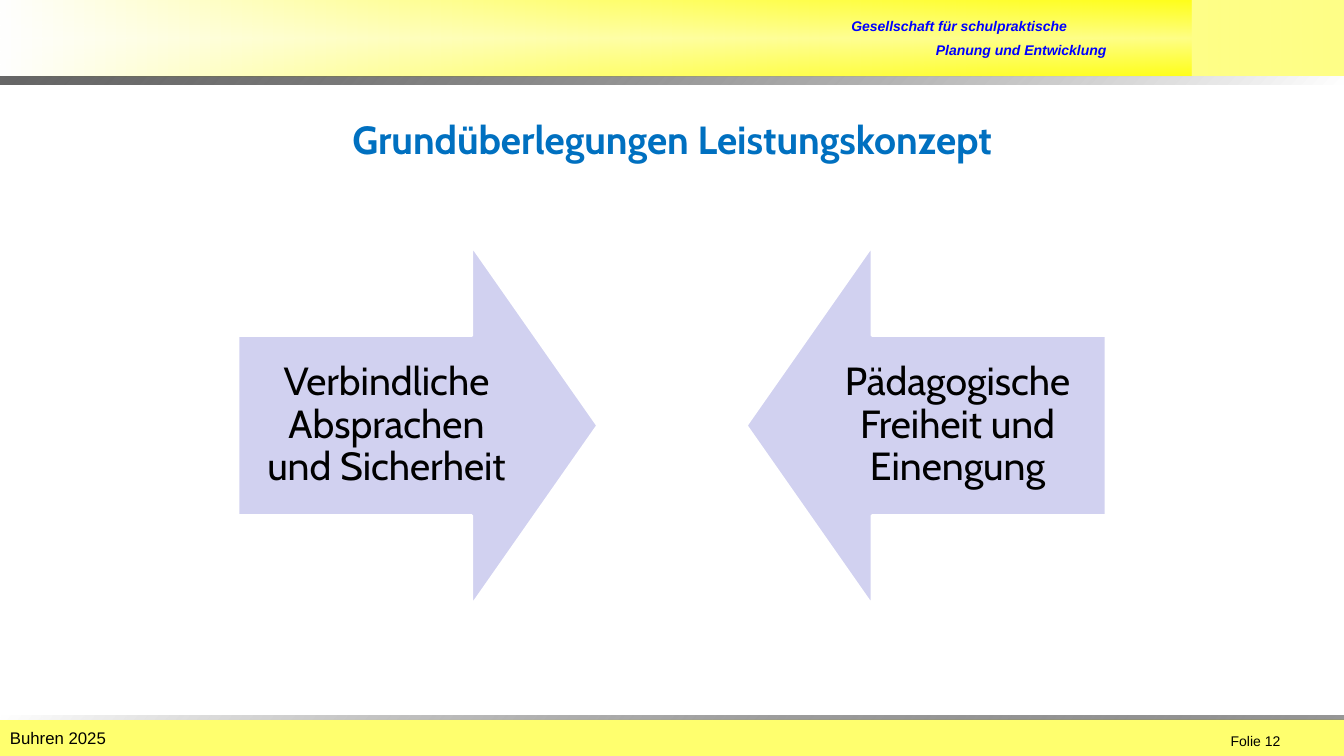
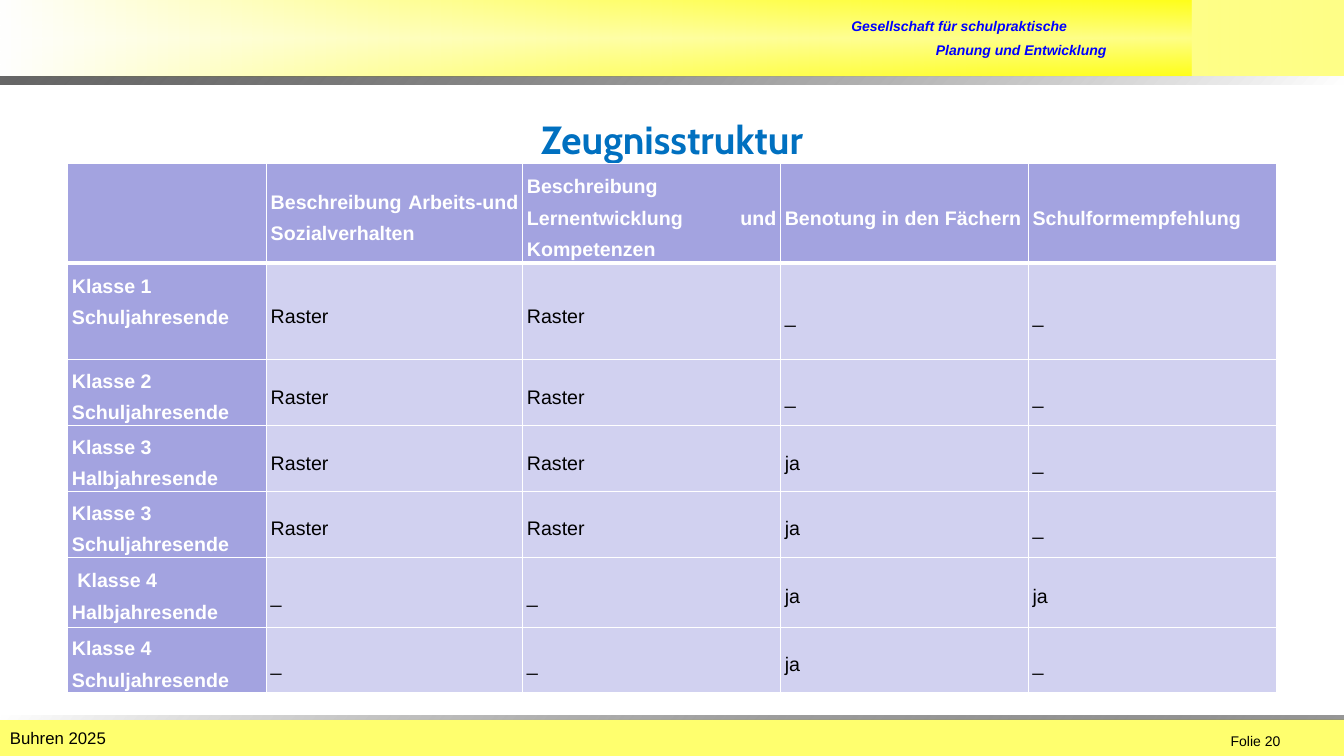
"""Build two slides on grading concepts and school report structure."""
from dataclasses import dataclass

import lxml.etree
import pptx
import pptx.dml.color
import pptx.enum.shapes
import pptx.enum.text
import pptx.oxml.ns
import pptx.util

Pt = pptx.util.Pt
Align = pptx.enum.text.PP_ALIGN
Anchor = pptx.enum.text.MSO_ANCHOR
Preset = pptx.enum.shapes.MSO_SHAPE
qn = pptx.oxml.ns.qn

COLOURS = {
    "yellow": "FFFF00",
    "white": "FFFFFF",
    "black": "000000",
    "blue": "0000FF",
    "title": "0070C0",
    "lilac": "A3A3E0",
    "pale": "D1D1F0",
}
WIDTH, HEIGHT = 960, 540


@dataclass(frozen=True)
class Stop:
    """A gradient stop with place and opacity in percent."""
    place: int
    colour: str
    opacity: int = 100


@dataclass(frozen=True)
class Band:
    """A borderless strip that starts at the left edge."""
    top: float
    width: float
    height: float
    stops: tuple[Stop, ...]
    angle: int = 0


@dataclass(frozen=True)
class Label:
    """A short line of text in the header or footer."""
    text: str
    left: float
    top: float
    width: float
    size: int = 10
    colour: str = "black"
    emphasis: bool = False


@dataclass(frozen=True)
class Arrow:
    """A block arrow with its text."""
    text: str
    left: float
    preset: Preset


@dataclass(frozen=True)
class Row:
    """A table row with its height and cell texts."""
    height: float
    texts: tuple[str, ...]
    label_bottom: float = 0


BANDS = (
    Band(0, 851, 54.7, (Stop(0, "yellow", 91), Stop(50, "white"), Stop(100, "yellow", 91)), 90),
    Band(0, WIDTH, 54.7, (Stop(0, "white"), Stop(100, "yellow", 47))),
    Band(514, WIDTH, HEIGHT - 514, (Stop(0, "yellow", 57),)),
    Band(54.7, WIDTH, 6, (Stop(0, "black", 60), Stop(100, "white")), 45),
    Band(511, WIDTH, 3, (Stop(0, "white"), Stop(100, "black", 41)), 45),
)
LABELS = (
    Label("Gesellschaft für schulpraktische", 601, 9, 257, colour="blue", emphasis=True),
    Label("Planung und Entwicklung", 661.5, 26, 197, colour="blue", emphasis=True),
    Label("Buhren 2025", 0, 516.2, 496, 12),
)
ARROWS = (
    Arrow("Verbindliche Absprachen und Sicherheit", 170, Preset.RIGHT_ARROW),
    Arrow("Pädagogische Freiheit und Einengung", 533, Preset.LEFT_ARROW),
)
COLUMN_WIDTHS = (142, 183, 184.2, 177, 177)
ROWS = (
    Row(71, ("", "Beschreibung Arbeits-und Sozialverhalten",
             "Beschreibung Lernentwicklung und Kompetenzen",
             "Benotung in den Fächern", "Schulformempfehlung")),
    Row(69, ("Klasse 1\vSchuljahresende", "Raster", "Raster", "_", "_"), 20),
    Row(47, ("Klasse 2\vSchuljahresende", "Raster", "Raster", "_", "_")),
    Row(47, ("Klasse 3\vHalbjahresende", "Raster", "Raster", "ja", "_")),
    Row(47, ("Klasse 3\vSchuljahresende", "Raster", "Raster", "ja", "_")),
    Row(50, (" Klasse 4\vHalbjahresende", "_", "_", "ja", "ja")),
    Row(47, ("Klasse 4\vSchuljahresende", "_", "_", "ja", "_")),
)


def rgb(name: str) -> pptx.dml.color.RGBColor:
    """Return a named colour."""
    return pptx.dml.color.RGBColor.from_string(COLOURS[name])


def style(para, font: str, size: int, colour: str, bold: bool = False, italic: bool = False) -> None:
    """Format every run of a paragraph."""
    for span in para.runs:
        span.font.name = font
        span.font.size = Pt(size)
        span.font.bold = bold
        span.font.italic = italic
        span.font.color.rgb = rgb(colour)


def add_colour(parent, stop: Stop) -> None:
    """Append a colour with its opacity to an XML element."""
    colour = lxml.etree.SubElement(parent, qn("a:srgbClr"), val=COLOURS[stop.colour])
    if stop.opacity < 100:
        lxml.etree.SubElement(colour, qn("a:alpha"), val=str(stop.opacity * 1000))


def add_band(page, band: Band) -> None:
    """Draw a strip with a translucent solid or gradient fill."""
    shape = page.shapes.add_shape(Preset.RECTANGLE, Pt(0), Pt(band.top), Pt(band.width), Pt(band.height))
    shape.shadow.inherit = False
    shape.line.fill.background()
    shape.fill.background()
    blank = shape._element.spPr.find(qn("a:noFill"))
    if len(band.stops) == 1:
        fill = lxml.etree.Element(qn("a:solidFill"))
        add_colour(fill, band.stops[0])
    else:
        fill = lxml.etree.Element(qn("a:gradFill"), rotWithShape="1")
        stops = lxml.etree.SubElement(fill, qn("a:gsLst"))
        for stop in band.stops:
            add_colour(lxml.etree.SubElement(stops, qn("a:gs"), pos=str(stop.place * 1000)), stop)
        lxml.etree.SubElement(fill, qn("a:lin"), ang=str(band.angle * 60000), scaled="1")
    blank.getparent().replace(blank, fill)


def add_label(page, label: Label) -> None:
    """Write a header or footer line."""
    box = page.shapes.add_textbox(Pt(label.left), Pt(label.top), Pt(label.width), Pt(19.5))
    box.text_frame.word_wrap = True
    box.text_frame.text = label.text
    style(box.text_frame.paragraphs[0], "Arial", label.size, label.colour, label.emphasis, label.emphasis)


def add_page(deck, title: str, number: int):
    """Add a slide with the shared bands, labels and title."""
    page = deck.slides.add_slide(deck.slide_layouts[5])
    for band in BANDS:
        add_band(page, band)
    for label in (*LABELS, Label(f"Folie {number}", 872, 520, 88)):
        add_label(page, label)
    box = page.shapes.title
    box.left, box.top, box.width, box.height = Pt(48), Pt(66.5), Pt(864), Pt(66)
    frame = box.text_frame
    frame.text = title
    frame.vertical_anchor = Anchor.MIDDLE
    frame.paragraphs[0].alignment = Align.CENTER
    style(frame.paragraphs[0], "Cabin", 28, "title", bold=True)
    return page


def add_arrow(page, arrow: Arrow) -> None:
    """Draw a block arrow with centred text."""
    shape = page.shapes.add_shape(arrow.preset, Pt(arrow.left), Pt(175.5), Pt(257), Pt(257))
    shape.adjustments[0], shape.adjustments[1] = 0.5, 0.35
    shape.shadow.inherit = False
    shape.fill.solid()
    shape.fill.fore_color.rgb = rgb("pale")
    shape.line.color.rgb = rgb("white")
    shape.line.width = Pt(2)
    frame = shape.text_frame
    frame.word_wrap = True
    frame.margin_left = frame.margin_right = frame.margin_top = frame.margin_bottom = Pt(16)
    frame.vertical_anchor = Anchor.MIDDLE
    frame.text = arrow.text
    para = frame.paragraphs[0]
    para.alignment = Align.CENTER
    para.line_spacing = 0.9
    style(para, "Cabin", 28, "black")


def add_borders(cell, top: int, bottom: int) -> None:
    """Give a cell white borders with the given widths."""
    properties = cell._tc.get_or_add_tcPr()
    for side, width in (("L", 1), ("R", 1), ("T", top), ("B", bottom)):
        line = lxml.etree.SubElement(properties, qn(f"a:ln{side}"), w=str(int(Pt(width))))
        add_colour(lxml.etree.SubElement(line, qn("a:solidFill")), Stop(0, "white"))


def add_report_table(page) -> None:
    """Draw the table of report contents by school year."""
    height = sum(row.height for row in ROWS)
    table = page.shapes.add_table(len(ROWS), len(COLUMN_WIDTHS), Pt(48.5), Pt(117),
                                  Pt(sum(COLUMN_WIDTHS)), Pt(height)).table
    table.first_row = table.horz_banding = False
    for column, width in zip(table.columns, COLUMN_WIDTHS):
        column.width = Pt(width)
    for row_index, row in enumerate(ROWS):
        table.rows[row_index].height = Pt(row.height)
        for column_index, text in enumerate(row.texts):
            cell = table.cell(row_index, column_index)
            heading = row_index == 0 or column_index == 0
            add_borders(cell, 3 if row_index == 1 else 1, 3 if row_index == 0 else 1)
            cell.fill.solid()
            cell.fill.fore_color.rgb = rgb("lilac" if heading else "pale")
            cell.margin_left = cell.margin_right = Pt(2.9)
            cell.margin_top = Pt(0)
            cell.margin_bottom = Pt(0 if column_index else row.label_bottom)
            cell.vertical_anchor = Anchor.MIDDLE
            para = cell.text_frame.paragraphs[0]
            para.text = text
            para.alignment = Align.JUSTIFY if column_index else Align.LEFT
            para.line_spacing = Pt(22.5)
            style(para, "Arial", 14, "white" if heading else "black", bold=heading)


def main() -> None:
    """Build and save the deck."""
    deck = pptx.Presentation()
    deck.slide_width, deck.slide_height = Pt(WIDTH), Pt(HEIGHT)
    page = add_page(deck, "Grundüberlegungen Leistungskonzept", 12)
    for arrow in ARROWS:
        add_arrow(page, arrow)
    add_report_table(add_page(deck, "Zeugnisstruktur", 20))
    deck.save("out.pptx")


if __name__ == "__main__":
    main()
